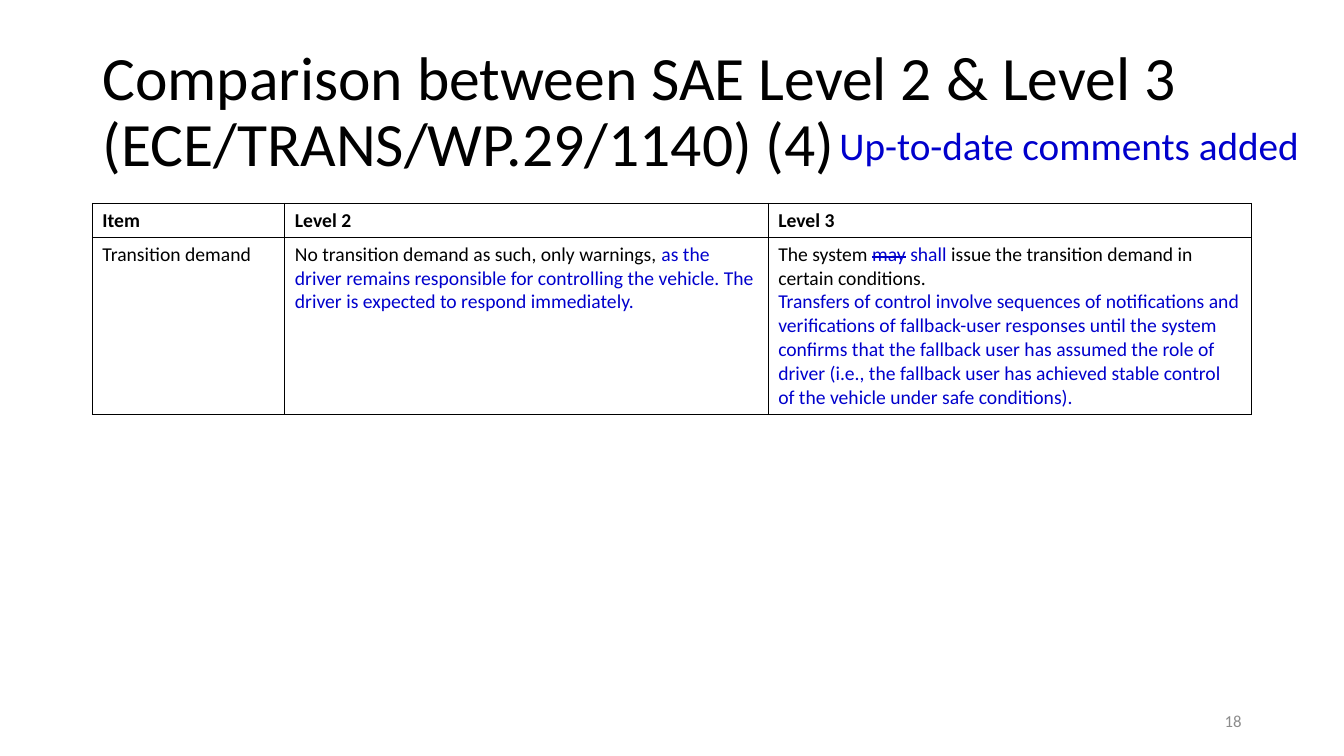
import pptx
import pptx.dml.color
import pptx.enum.text
import pptx.oxml
import pptx.oxml.ns
import pptx.util
from pptx.enum.text import MSO_ANCHOR, PP_ALIGN
from pptx.util import Pt

TITLE = "Comparison between SAE Level 2 & Level 3 (ECE/TRANS/WP.29/1140) (4)"
REMARK = "Up-to-date comments added"
PAGE_NUMBER = "18"

# Each cell is a list of paragraphs; each paragraph is a list of (text, style) runs.
ROWS = [
    [[[("Item", "header")]], [[("Level 2", "header")]], [[("Level 3", "header")]]],
    [
        [[("Transition demand", "body")]],
        [[
            ("No transition demand as such, only warnings, ", "body"),
            ("as the driver remains responsible for controlling the vehicle. "
             "The driver is expected to respond immediately.", "added"),
        ]],
        [
            [
                ("The system ", "body"),
                ("may", "deleted"),
                (" shall ", "added"),
                ("issue the transition demand in certain conditions.", "body"),
            ],
            [("Transfers of control involve sequences of notifications and "
              "verifications of fallback-user responses until the system confirms "
              "that the fallback user has assumed the role of driver (i.e., the "
              "fallback user has achieved stable control of the vehicle under safe "
              "conditions).", "added")],
        ],
    ],
]

THEME = {
    "font": "Calibri",
    "black": "000000",
    "blue": "0000CC",
    "grey": "8C8C8C",
    "title_size": 44,
    "remark_size": 28,
    "table_size": 14,
    "number_size": 12,
}

SLIDE_WIDTH, SLIDE_HEIGHT = 960, 540
MARGIN = 66
CONTENT_WIDTH = SLIDE_WIDTH - 2 * MARGIN
TITLE_TOP, TITLE_HEIGHT = 28.75, 104.4
TABLE_TOP = 145.4
ITEM_WIDTH = 137.5
LEVEL_WIDTH = (CONTENT_WIDTH - ITEM_WIDTH) / 2
ROW_HEIGHTS = [24.25, 126.5]
REMARK_LEFT, REMARK_TOP, REMARK_HEIGHT = 592.5, 82.8, 41
NUMBER_TOP, NUMBER_WIDTH, NUMBER_HEIGHT = 500.5, 216, 28.75


def format_run(run, size, color, bold=False):
    run.font.name = THEME["font"]
    run.font.size = Pt(size)
    run.font.bold = bold
    run.font.color.rgb = pptx.dml.color.RGBColor.from_string(color)


def place(shape, left, top, width, height):
    shape.left, shape.top = Pt(left), Pt(top)
    shape.width, shape.height = Pt(width), Pt(height)


def add_label(slide, text, box, size, color):
    label = slide.shapes.add_textbox(*(Pt(length) for length in box))
    label.text_frame.word_wrap = True
    label.text_frame.text = text
    format_run(label.text_frame.paragraphs[0].runs[0], size, color)
    return label


def add_borders(cell):
    properties = cell._tc.get_or_add_tcPr()
    for position, side in enumerate(("lnL", "lnR", "lnT", "lnB")):
        border = pptx.oxml.parse_xml(
            f'<a:{side} {pptx.oxml.ns.nsdecls("a")} w="{Pt(1)}"><a:solidFill>'
            f'<a:srgbClr val="{THEME["black"]}"/></a:solidFill></a:{side}>'
        )
        properties.insert(position, border)


def fill_cell(cell, paragraphs):
    cell.fill.background()
    add_borders(cell)
    frame = cell.text_frame
    for index, runs in enumerate(paragraphs):
        paragraph = frame.add_paragraph() if index else frame.paragraphs[0]
        for text, style in runs:
            run = paragraph.add_run()
            run.text = text
            color = THEME["blue" if style in ("added", "deleted") else "black"]
            format_run(run, THEME["table_size"], color, style == "header")
            if style == "deleted":
                run.font._element.set("strike", "sngStrike")


def add_title(slide):
    title = slide.shapes.title
    place(title, MARGIN, TITLE_TOP, CONTENT_WIDTH, TITLE_HEIGHT)
    frame = title.text_frame
    frame.text = TITLE
    frame.word_wrap = True
    frame.auto_size = pptx.enum.text.MSO_AUTO_SIZE.NONE
    frame.vertical_anchor = MSO_ANCHOR.MIDDLE
    paragraph = frame.paragraphs[0]
    paragraph.alignment = PP_ALIGN.LEFT
    paragraph.line_spacing = 0.9
    paragraph.space_before = Pt(0)
    format_run(paragraph.runs[0], THEME["title_size"], THEME["black"])


def add_comparison(slide):
    table = slide.shapes.add_table(
        len(ROWS), len(ROWS[0]), Pt(MARGIN), Pt(TABLE_TOP),
        Pt(CONTENT_WIDTH), Pt(sum(ROW_HEIGHTS)),
    ).table
    table.first_row = table.horz_banding = False
    for column, width in zip(table.columns, (ITEM_WIDTH, LEVEL_WIDTH, LEVEL_WIDTH)):
        column.width = Pt(width)
    for row, height, contents in zip(table.rows, ROW_HEIGHTS, ROWS):
        row.height = Pt(height)
        for cell, paragraphs in zip(row.cells, contents):
            fill_cell(cell, paragraphs)


def main():
    presentation = pptx.Presentation()
    presentation.slide_width = Pt(SLIDE_WIDTH)
    presentation.slide_height = Pt(SLIDE_HEIGHT)
    slide = presentation.slides.add_slide(presentation.slide_layouts[5])
    add_title(slide)
    add_comparison(slide)
    number_left = SLIDE_WIDTH - MARGIN - NUMBER_WIDTH
    number = add_label(
        slide, PAGE_NUMBER, (number_left, NUMBER_TOP, NUMBER_WIDTH, NUMBER_HEIGHT),
        THEME["number_size"], THEME["grey"],
    )
    number.text_frame.vertical_anchor = MSO_ANCHOR.MIDDLE
    number.text_frame.paragraphs[0].alignment = PP_ALIGN.RIGHT
    add_label(
        slide, REMARK,
        (REMARK_LEFT, REMARK_TOP, SLIDE_WIDTH - REMARK_LEFT, REMARK_HEIGHT),
        THEME["remark_size"], THEME["blue"],
    )
    presentation.save("out.pptx")


if __name__ == "__main__":
    main()
